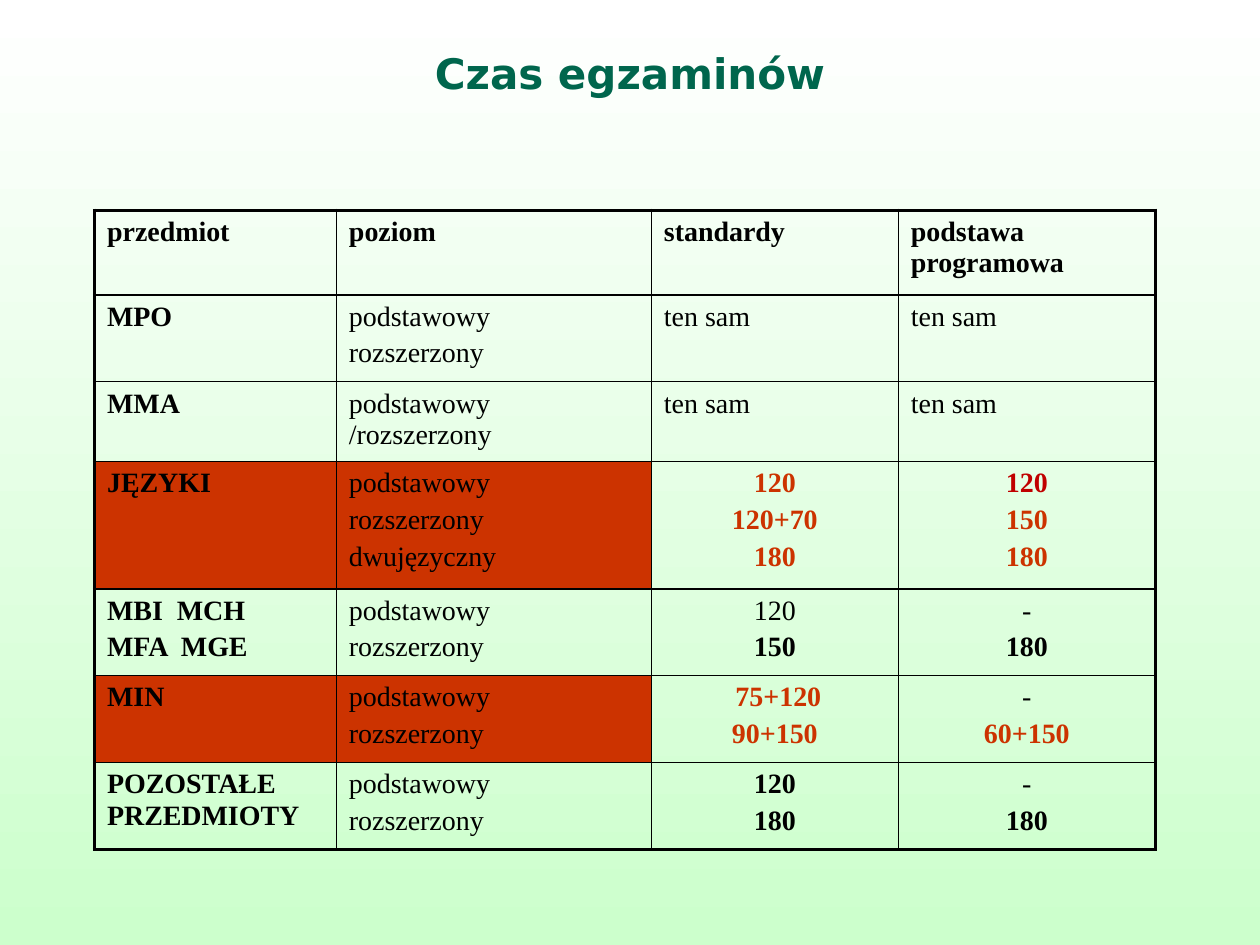
from lxml import etree
from pptx import Presentation
from pptx.dml.color import RGBColor
from pptx.enum import text
from pptx.oxml.ns import qn
from pptx.util import Inches, Pt

BLACK = RGBColor(0x00, 0x00, 0x00)
WHITE = RGBColor(0xFF, 0xFF, 0xFF)
MINT = RGBColor(0xCC, 0xFF, 0xCC)
GREEN = RGBColor(0x00, 0x66, 0x4D)
ORANGE = RGBColor(0xCC, 0x33, 0x00)
RED = RGBColor(0xC0, 0x00, 0x00)

# Text styles: (bold, colour)
PLAIN = (False, BLACK)
BOLD = (True, BLACK)
CHANGED = (True, ORANGE)
CHANGED_RED = (True, RED)

COLUMN_WIDTHS = [1.92, 2.5, 1.96, 2.04]
ROW_HEIGHTS = [0.67, 0.69, 0.63, 1.01, 0.69, 0.69, 0.69]
HEADER = ["przedmiot", "poziom", "standardy", "podstawa programowa"]
LEVELS = ["podstawowy", "rozszerzony"]
SAME = [("ten sam", PLAIN)]
HIGHLIGHTED = {"JĘZYKI", "MIN"}

# Subject lines, level lines, times by standards, times by core curriculum
EXAMS = [
    (["MPO"], LEVELS, SAME, SAME),
    (["MMA"], ["podstawowy /rozszerzony"], SAME, SAME),
    (["JĘZYKI"], LEVELS + ["dwujęzyczny"],
     [("120", CHANGED), ("120+70", CHANGED), ("180", CHANGED)],
     [("120", CHANGED_RED), ("150", CHANGED), ("180", CHANGED)]),
    (["MBI  MCH", "MFA  MGE"], LEVELS,
     [("120", PLAIN), ("150", BOLD)], [("-", PLAIN), ("180", BOLD)]),
    (["MIN"], LEVELS,
     [(" 75+120", CHANGED), ("90+150", CHANGED)],
     [("-", PLAIN), ("60+150", CHANGED)]),
    (["POZOSTAŁE PRZEDMIOTY"], LEVELS,
     [("120", BOLD), ("180", BOLD)], [("-", PLAIN), ("180", BOLD)]),
]


def set_background(slide):
    fill = slide.background.fill
    fill.gradient()
    fill.gradient_angle = 270
    for stop, color, position in zip(fill.gradient_stops, (WHITE, MINT), (0, 1)):
        stop.color.rgb = color
        stop.position = position


def style_font(font, name, size, bold, color):
    font.name = name
    font.size = Pt(size)
    font.bold = bold
    font.color.rgb = color


def add_title(slide, title):
    box = slide.shapes.add_textbox(Inches(0.75), Inches(0.33), Inches(8.5), Inches(0.67))
    box.text_frame.word_wrap = True
    paragraph = box.text_frame.paragraphs[0]
    paragraph.text = title
    paragraph.alignment = text.PP_ALIGN.CENTER
    style_font(paragraph.font, "DejaVu Sans", 24, True, GREEN)


def set_borders(cell, widths):
    properties = cell._tc.get_or_add_tcPr()
    for side, width in widths.items():
        line = etree.SubElement(properties, qn(f"a:ln{side}"), w=str(Pt(width)))
        fill = etree.SubElement(line, qn("a:solidFill"))
        etree.SubElement(fill, qn("a:srgbClr"), val=str(BLACK))


def fill_cell(cell, lines, centered, highlighted):
    frame = cell.text_frame
    for index, (line, (bold, color)) in enumerate(lines):
        paragraph = frame.paragraphs[0] if index == 0 else frame.add_paragraph()
        paragraph.text = line
        paragraph.space_before = Pt(3.2)
        paragraph.alignment = text.PP_ALIGN.CENTER if centered else text.PP_ALIGN.LEFT
        style_font(paragraph.font, "Times New Roman", 16, bold, color)
    if highlighted:
        cell.fill.solid()
        cell.fill.fore_color.rgb = ORANGE
    else:
        cell.fill.background()


def table_rows():
    yield [[(label, BOLD)] for label in HEADER]
    for subjects, levels, standards, curriculum in EXAMS:
        yield [[(subject, BOLD) for subject in subjects],
               [(level, PLAIN) for level in levels], standards, curriculum]


def add_exam_table(slide):
    row_count, column_count = len(ROW_HEIGHTS), len(COLUMN_WIDTHS)
    table = slide.shapes.add_table(
        row_count, column_count, Inches(0.75), Inches(1.67),
        Inches(sum(COLUMN_WIDTHS)), Inches(sum(ROW_HEIGHTS))).table
    table.first_row = table.horz_banding = False
    for column, width in zip(table.columns, COLUMN_WIDTHS):
        column.width = Inches(width)
    for row, height in zip(table.rows, ROW_HEIGHTS):
        row.height = Inches(height)

    for r, cells in enumerate(table_rows()):
        marked = cells[0][0][0] in HIGHLIGHTED
        for c, lines in enumerate(cells):
            cell = table.cell(r, c)
            # Thick outer frame, thin inner grid
            outer = {"L": c == 0, "R": c == column_count - 1,
                     "T": r == 0, "B": r == row_count - 1}
            set_borders(cell, {side: 2.25 if edge else 1 for side, edge in outer.items()})
            # Exam times are centred from the languages row down
            fill_cell(cell, lines, r >= 3 and c >= 2, marked and c < 2)


def main():
    presentation = Presentation()
    presentation.slide_width = Inches(10)
    presentation.slide_height = Inches(7.5)
    slide = presentation.slides.add_slide(presentation.slide_layouts[6])
    set_background(slide)
    add_title(slide, "Czas egzaminów")
    add_exam_table(slide)
    presentation.save("out.pptx")


if __name__ == "__main__":
    main()
